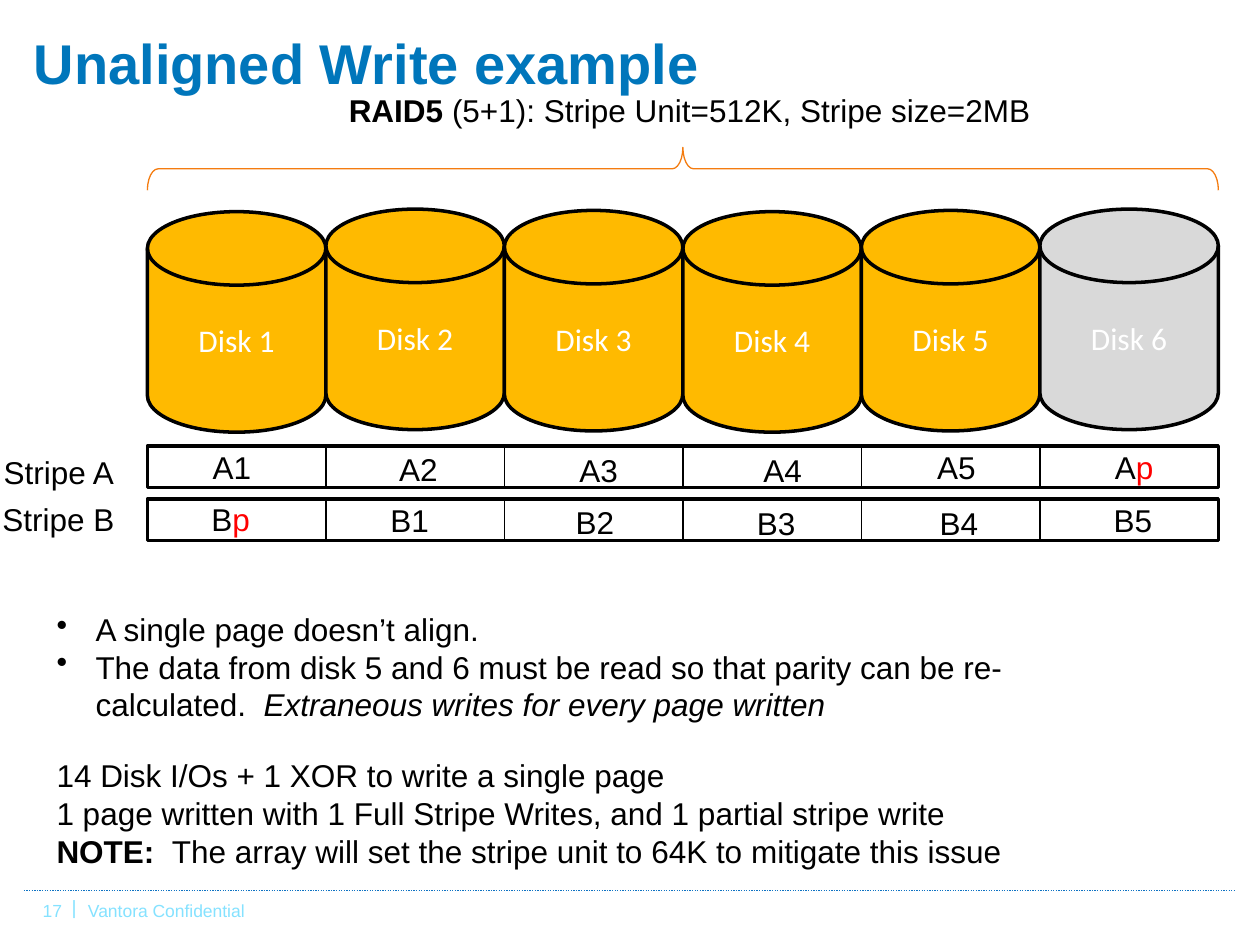
import pptx
import pptx.dml.color
import pptx.enum.dml
import pptx.enum.shapes
import pptx.enum.text
import pptx.oxml.ns
import pptx.util
from lxml import etree

COLORS = {
    "title": "0076BB", "text": "000000", "parity": "FF0000", "data": "FFBA00",
    "spare": "D9D9D9", "white": "FFFFFF", "brace": "F47C10", "rule": "0F73C3",
    "footer": "85E2FF",
}
SHAPES = pptx.enum.shapes.MSO_SHAPE
ANCHOR = pptx.enum.text.MSO_ANCHOR

# The slide is a grid of 100 columns by 75 rows.
ARRAY_LEFT, ARRAY_WIDTH, DISKS = 11.7, 85, 6
DISK_WIDTH = ARRAY_WIDTH / DISKS
STRIPE_HEIGHT = 3.3


def disk_left(index):
    return ARRAY_LEFT + index * DISK_WIDTH


class SlideBuilder:
    def __init__(self, deck, columns=100, rows=75):
        self.slide = deck.slides.add_slide(deck.slide_layouts[6])
        self.column = deck.slide_width / columns
        self.row = deck.slide_height / rows
        self.font, self.size = "Arial", 18

    def place(self, left, top, width, height):
        return (round(left * self.column), round(top * self.row),
                round(width * self.column), round(height * self.row))

    def color(self, name):
        return pptx.dml.color.RGBColor.from_string(COLORS[name])

    def outline(self, item, color, weight):
        item.line.color.rgb = self.color(color)
        item.line.width = pptx.util.Pt(weight)

    def add_run(self, paragraph, words, color="text", size=None, font=None,
                bold=False, italic=False):
        run = paragraph.add_run()
        run.text = words
        run.font.name = font or self.font
        run.font.size = pptx.util.Pt(size or self.size)
        run.font.bold, run.font.italic = bold, italic
        run.font.color.rgb = self.color(color)

    def bullet(self, paragraph):
        properties = paragraph._p.get_or_add_pPr()
        indent = pptx.util.Inches(0.31)
        properties.set("marL", str(indent))
        properties.set("indent", str(-indent))
        mark = etree.SubElement(properties, pptx.oxml.ns.qn("a:buChar"))
        mark.set("char", "•")

    def text(self, area, paragraphs, bulleted=False, anchor=ANCHOR.TOP):
        """Each paragraph is a list of (words, style) runs."""
        frame = self.slide.shapes.add_textbox(*self.place(*area)).text_frame
        frame.word_wrap = True
        frame.vertical_anchor = anchor
        for index, runs in enumerate(paragraphs):
            paragraph = frame.add_paragraph() if index else frame.paragraphs[0]
            if bulleted:
                self.bullet(paragraph)
            for words, style in runs:
                self.add_run(paragraph, words, **style)

    def shape(self, kind, area, line, weight=2, fill=None):
        shape = self.slide.shapes.add_shape(kind, *self.place(*area))
        shape.shadow.inherit = False
        if fill:
            shape.fill.solid()
            shape.fill.fore_color.rgb = self.color(fill)
        else:
            shape.fill.background()
        self.outline(shape, line, weight)
        return shape

    def line(self, start, end, color="text"):
        ends = self.place(*start, *end)
        connector = self.slide.shapes.add_connector(
            pptx.enum.shapes.MSO_CONNECTOR.STRAIGHT, *ends)
        self.outline(connector, color, 0.75)
        etree.SubElement(connector._element.spPr, pptx.oxml.ns.qn("a:effectLst"))
        return connector

    def disk(self, index, top, fill):
        disk = self.shape(SHAPES.FLOWCHART_MAGNETIC_DISK,
                          (disk_left(index), top, DISK_WIDTH, 17.5), "text", fill=fill)
        disk.text_frame.vertical_anchor = ANCHOR.MIDDLE
        paragraph = disk.text_frame.paragraphs[0]
        paragraph.alignment = pptx.enum.text.PP_ALIGN.CENTER
        self.add_run(paragraph, f"Disk {index + 1}", "white", font="Calibri")

    def stripe(self, top, units):
        """Draws a stripe; each unit is (letter, suffix, left, top)."""
        band = self.shape(SHAPES.RECTANGLE,
                          (ARRAY_LEFT, top, ARRAY_WIDTH, STRIPE_HEIGHT), "text")
        for index in range(1, DISKS):
            x = disk_left(index)
            divider = self.line((x, top), (x, top + STRIPE_HEIGHT))
            if index * 2 == DISKS:
                divider.begin_connect(band, 0)
                divider.end_connect(band, 2)
        for letter, suffix, left, label_top in units:
            runs = ([(letter, {}), (suffix, {"color": "parity"})]
                    if suffix == "p" else [(letter + suffix, {})])
            self.text((left, label_top, 5.4, 4), [runs])


def main():
    deck = pptx.Presentation()
    deck.slide_width, deck.slide_height = pptx.util.Inches(10), pptx.util.Inches(7.5)
    page = SlideBuilder(deck)

    rule = page.line((1.9, 70.7), (98.1, 70.7), "rule")
    rule.line.dash_style = pptx.enum.dml.MSO_LINE.ROUND_DOT
    for words, size, area in [
        ("17", 10, (2.4, 70.9, 5.1, 2.7)),
        ("Vantora Confidential", 10, (6, 70.9, 50, 4)),
        ("|", 11, (4.7, 70.6, 3, 2.7)),
    ]:
        page.text(area, [[(words, {"size": size, "color": "footer"})]])

    page.text((1.7, 1.7, 74.7, 6.4),
              [[("Unaligned Write example", {"size": 32, "color": "title", "bold": True})]],
              anchor=ANCHOR.MIDDLE)
    page.text((26.7, 6.7, 62.3, 4),
              [[("RAID5", {"bold": True}), (" (5+1): Stripe Unit=512K, Stripe size=2MB", {})]])

    brace_depth, brace_middle = 3.4, 13.4
    brace = page.shape(
        SHAPES.RIGHT_BRACE,
        (ARRAY_LEFT + (ARRAY_WIDTH - brace_depth) / 2, brace_middle - ARRAY_WIDTH / 2,
         brace_depth, ARRAY_WIDTH), "brace", 0.75)
    brace.rotation = 270
    brace.adjustments[0] = 0.25

    for index, top in enumerate([16.8, 16.6, 16.7, 16.8, 16.7, 16.6]):
        page.disk(index, top, "spare" if index == DISKS - 1 else "data")

    page.stripe(35.4, [
        ("A", "1", 15.9, 35.1), ("A", "2", 30.7, 35.2), ("A", "3", 45, 35.3),
        ("A", "4", 59.6, 35.3), ("A", "5", 73.4, 35.1), ("A", "p", 87.5, 35.1)])
    page.stripe(39.6, [
        ("B", "p", 15.8, 39.2), ("B", "1", 30, 39.3), ("B", "2", 44.7, 39.4),
        ("B", "3", 59.1, 39.5), ("B", "4", 73.6, 39.5), ("B", "5", 87.4, 39.3)])
    for name, left, top in [("Stripe A", -0.7, 35.5), ("Stripe B", -0.8, 39.2)]:
        page.text((left, top, 15.8, 4), [[(name, {})]])

    page.text((3.5, 47.9, 85.5, 16.2), [
        [("A single page doesn’t align.", {})],
        [("The data from disk 5 and 6 must be read so that parity can be re-calculated.  ", {}),
         ("Extraneous writes for every page written", {"italic": True})],
    ], bulleted=True)
    page.text((3.5, 59.5, 85.5, 10.1), [
        [("14 Disk I/Os + 1 XOR to write a single page", {})],
        [("1 page written with 1 Full Stripe Writes, and 1 partial stripe write", {})],
        [("NOTE:  ", {"bold": True}),
         ("The array will set the stripe unit to 64K to mitigate this issue", {})],
    ])
    deck.save("out.pptx")


if __name__ == "__main__":
    main()
